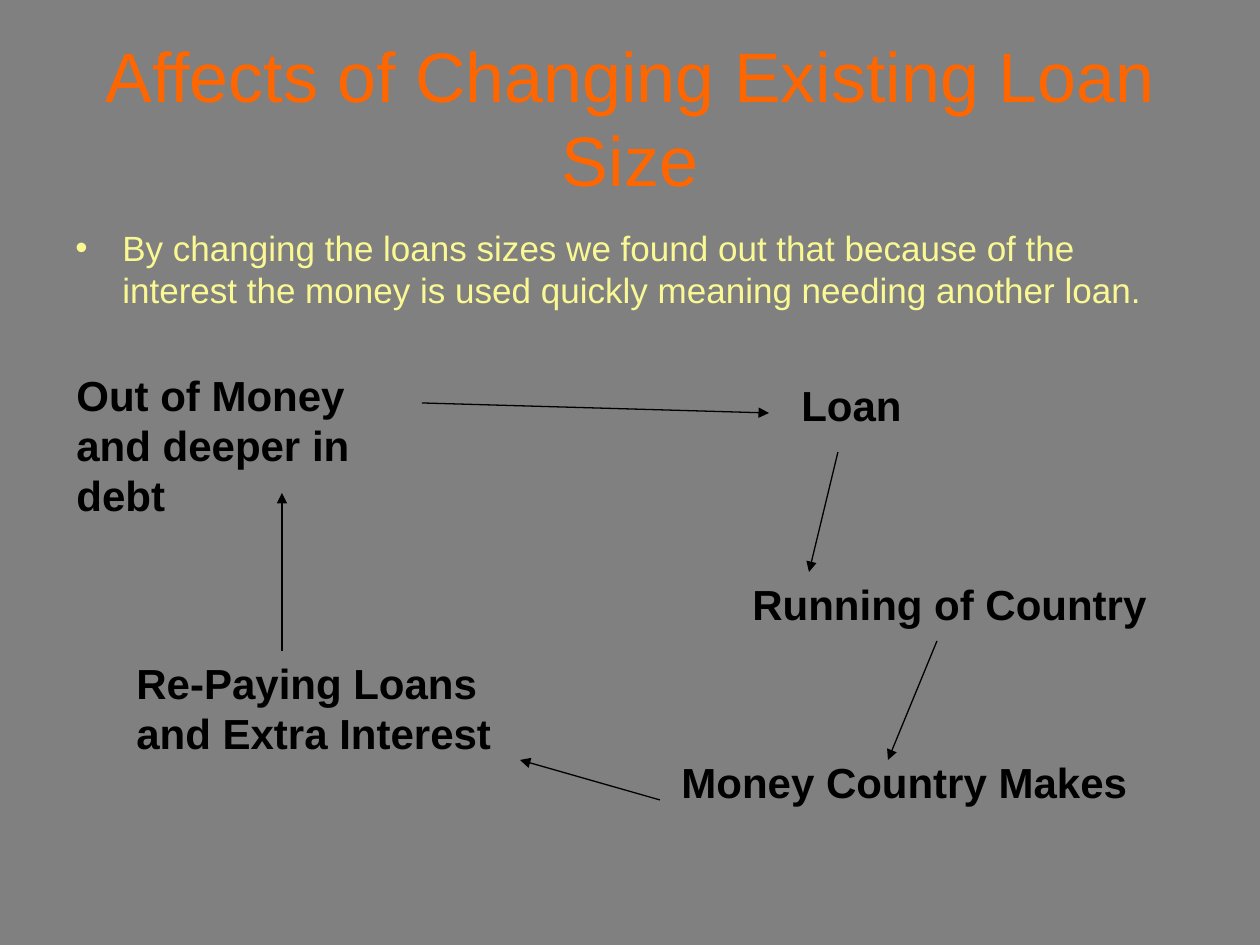
from lxml.etree import SubElement
from pptx import Presentation
from pptx.dml.color import RGBColor
from pptx.enum.shapes import MSO_CONNECTOR
from pptx.enum.text import MSO_ANCHOR, MSO_AUTO_SIZE, PP_ALIGN
from pptx.oxml.ns import qn
from pptx.util import Emu, Pt

PX = 914400 // 126
FONT = "Arial"
GREY, ORANGE, YELLOW, BLACK = "808080", "FF6600", "FAF892", "000000"

# Stages of the debt cycle: text, left, top, width, height
STAGES = [
    ("Loan", 789, 373, 126, 63),
    ("Running of Country", 740, 572, 420, 63),
    ("Money Country Makes", 669, 750, 471, 63),
    ("Re-Paying Loans\nand Extra Interest", 124, 651, 381, 113),
    ("Out of Money\vand deeper in debt", 64, 363, 398, 113),
]
# Arrows from each stage to the next: start x, y, end x, y
STEPS = [
    (838, 452, 809, 572),
    (937, 641, 888, 760),
    (660, 800, 520, 760),
    (282, 651, 282, 493),
    (422, 403, 769, 413),
]


def px(*lengths):
    return [Emu(length * PX) for length in lengths]


def rgb(value):
    return RGBColor.from_string(value)


def add_text(slide, text, box, size, color, bold=False, wrap=True):
    frame = slide.shapes.add_textbox(*px(*box)).text_frame
    frame.word_wrap = wrap
    frame.text = text
    for paragraph in frame.paragraphs:
        for run in paragraph.runs:
            font = run.font
            font.name, font.size, font.bold = FONT, Pt(size), bold
            font.color.rgb = rgb(color)
    return frame


def add_title(slide, text):
    frame = add_text(slide, text, (63, 38, 1134, 157), 40, ORANGE)
    frame.vertical_anchor = MSO_ANCHOR.MIDDLE
    frame.paragraphs[0].alignment = PP_ALIGN.CENTER


def add_bullet(slide, text):
    frame = add_text(slide, text, (63, 220, 1134, 624), 20, YELLOW)
    paragraph = frame.paragraphs[0]
    paragraph.space_before = Pt(4)
    indent = px(47)[0]
    properties = paragraph._p.get_or_add_pPr()
    properties.set("marL", str(indent))
    properties.set("indent", str(-indent))
    SubElement(properties, qn("a:buFont"), typeface=FONT)
    SubElement(properties, qn("a:buChar"), char="•")


def add_stage(slide, text, *box):
    frame = add_text(slide, text, box, 24, BLACK, bold=True, wrap=False)
    frame.auto_size = MSO_AUTO_SIZE.SHAPE_TO_FIT_TEXT


def add_arrow(slide, *ends):
    arrow = slide.shapes.add_connector(MSO_CONNECTOR.STRAIGHT, *px(*ends))
    arrow.line.color.rgb = rgb(BLACK)
    arrow.line.width = Pt(0.75)
    SubElement(arrow.line._get_or_add_ln(), qn("a:tailEnd"), type="triangle")
    SubElement(arrow._element.spPr, qn("a:effectLst"))


def main():
    deck = Presentation()
    deck.slide_width, deck.slide_height = px(1260, 945)
    slide = deck.slides.add_slide(deck.slide_layouts[6])
    fill = slide.background.fill
    fill.solid()
    fill.fore_color.rgb = rgb(GREY)

    add_title(slide, "Affects of Changing Existing Loan Size")
    add_bullet(slide, "By changing the loans sizes we found out that because of the "
                      "interest the money is used quickly meaning needing another loan.")
    for stage in STAGES:
        add_stage(slide, *stage)
    for step in STEPS:
        add_arrow(slide, *step)
    deck.save("out.pptx")


if __name__ == "__main__":
    main()
